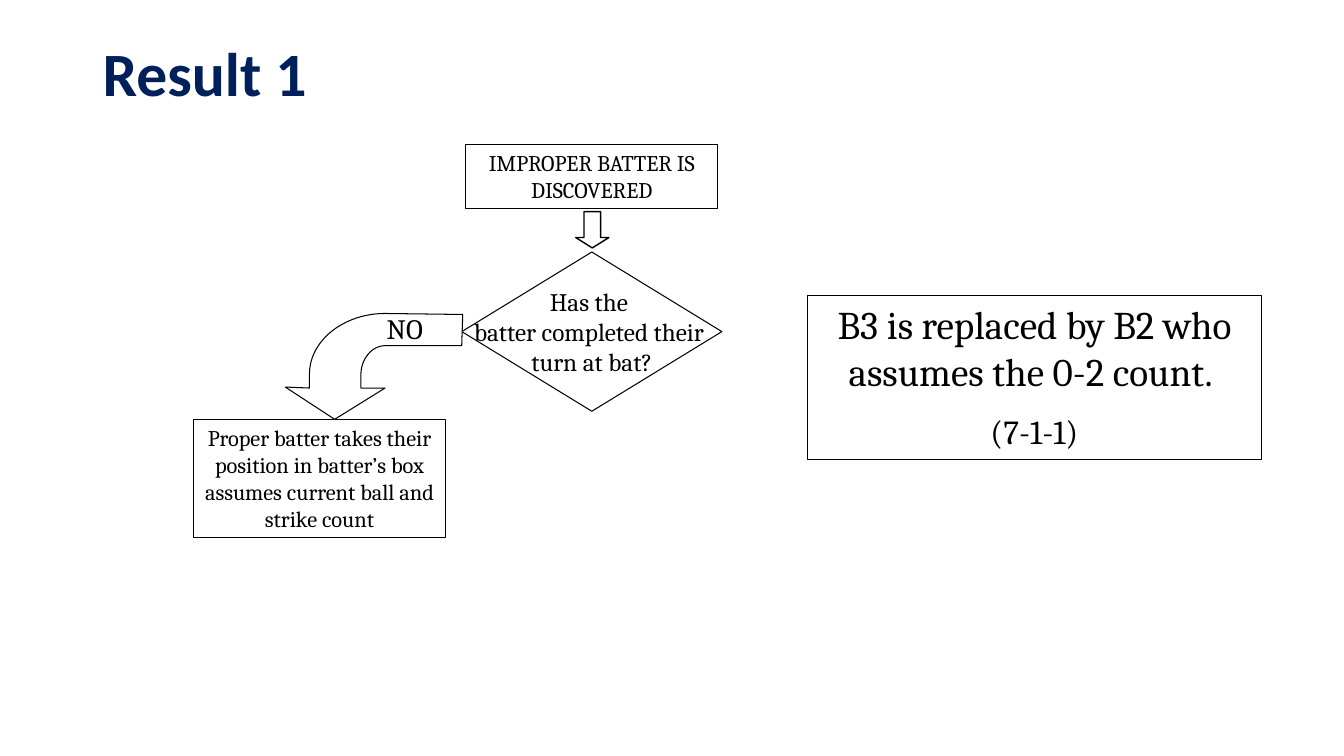
import dataclasses

import pptx
import pptx.dml.color
import pptx.enum.shapes
import pptx.enum.text
import pptx.util

Inches = pptx.util.Inches
Pt = pptx.util.Pt
MSO = pptx.enum.shapes.MSO_SHAPE
ALIGN = pptx.enum.text.PP_ALIGN
ANCHOR = pptx.enum.text.MSO_ANCHOR

BLACK, WHITE, NAVY = "000000", "FFFFFF", "00205B"
Point = tuple[float, float]


@dataclasses.dataclass
class Label:
    lines: list[str]
    sizes: list[int]
    font: str = "Cambria"
    color: str = BLACK
    bold: bool = False
    align: ALIGN = ALIGN.CENTER
    anchor: ANCHOR = ANCHOR.TOP
    wrap: bool = True
    gap: float = 0
    spacing: float = 1.0


@dataclasses.dataclass
class Node:
    kind: MSO
    box: tuple[float, float, float, float]
    label: Label | None = None
    line_width: float = 0.75
    adjustments: tuple[float, ...] = ()


def rgb(color: str) -> pptx.dml.color.RGBColor:
    return pptx.dml.color.RGBColor.from_string(color)


def outline(sp, width: float) -> None:
    sp.shadow.inherit = False
    sp.fill.solid()
    sp.fill.fore_color.rgb = rgb(WHITE)
    sp.line.color.rgb = rgb(BLACK)
    sp.line.width = Pt(width)


def write(sp, label: Label) -> None:
    tf = sp.text_frame
    tf.text = "\n".join(label.lines)
    tf.word_wrap = label.wrap
    tf.vertical_anchor = label.anchor
    for i, (p, size) in enumerate(zip(tf.paragraphs, label.sizes)):
        p.alignment = label.align
        p.line_spacing = label.spacing
        if i and label.gap:
            p.space_before = Pt(label.gap)
        for r in p.runs:
            r.font.name = label.font
            r.font.size = Pt(size)
            r.font.bold = label.bold
            r.font.color.rgb = rgb(label.color)


def add_text(slide, box: tuple[float, ...], label: Label) -> None:
    write(slide.shapes.add_textbox(*map(Inches, box)), label)


def add_node(slide, node: Node) -> None:
    sp = slide.shapes.add_shape(node.kind, *map(Inches, node.box))
    for i, value in enumerate(node.adjustments):
        sp.adjustments[i] = value
    outline(sp, node.line_width)
    if node.label:
        write(sp, node.label)


def curve(a: Point, b: Point, c: Point, d: Point, steps: int = 24) -> list[Point]:
    """Points along a cubic Bezier curve, both ends included."""
    points = []
    for i in range(steps + 1):
        t = i / steps
        weights = ((1 - t) ** 3, 3 * t * (1 - t) ** 2, 3 * t * t * (1 - t), t ** 3)
        x, y = (sum(w * v for w, v in zip(weights, axis)) for axis in zip(a, b, c, d))
        points.append((x, y))
    return points


def add_bent_arrow(slide) -> None:
    outer = curve((3.07, 3.71), (3.07, 3.38), (3.41, 3.11), (3.82, 3.11))
    inner = curve((3.82, 3.43), (3.69, 3.43), (3.58, 3.56), (3.58, 3.72))
    points = [(3.32, 4.16), (2.83, 3.84), (3.07, 3.85), *outer, (4.59, 3.12),
              (4.58, 3.43), *inner, (3.58, 3.85), (3.82, 3.85)]
    # The builder keeps whole units only, so the points go in as EMU
    tip, *rest = [(Inches(x), Inches(y)) for x, y in points]
    builder = slide.shapes.build_freeform(*tip, scale=1.0)
    builder.add_line_segments(rest, close=True)
    outline(builder.convert_to_shape(), 0.75)


NODES = [
    Node(MSO.RECTANGLE, (4.62, 1.43, 2.5, 0.64),
         Label(["IMPROPER BATTER IS DISCOVERED"], [16])),
    Node(MSO.FLOWCHART_DECISION, (4.58, 2.5, 2.58, 1.58),
         Label(["Has the ", "batter completed their ", "turn at bat?"], [18] * 3,
               anchor=ANCHOR.MIDDLE, wrap=False)),
    Node(MSO.DOWN_ARROW, (5.71, 2.1, 0.33, 0.36), line_width=1,
         adjustments=(0.5, 0.312)),
    Node(MSO.RECTANGLE, (1.92, 4.16, 2.5, 1.17),
         Label(["Proper batter takes their position in batter’s box "
                "assumes current ball and strike count"], [16])),
    Node(MSO.RECTANGLE, (8.01, 2.93, 4.5, 1.63),
         Label(["B3 is replaced by B2 who assumes the 0-2 count. ", "(7-1-1)"],
               [28, 24], gap=12)),
]


def main() -> None:
    prs = pptx.Presentation()
    prs.slide_width, prs.slide_height = Inches(13.33), Inches(7.5)
    slide = prs.slides.add_slide(prs.slide_layouts[6])

    # Title
    add_text(slide, (0.92, 0.38, 11.5, 1.45),
             Label(["Result 1"], [44], font="Calibri", color=NAVY, bold=True,
                   align=ALIGN.LEFT, spacing=0.9))

    # Flowchart and result box
    for node in NODES:
        add_node(slide, node)

    # "No" branch
    add_bent_arrow(slide)
    add_text(slide, (3.71, 3.04, 0.61, 0.44), Label(["NO"], [20], wrap=False))

    prs.save("out.pptx")


if __name__ == "__main__":
    main()
